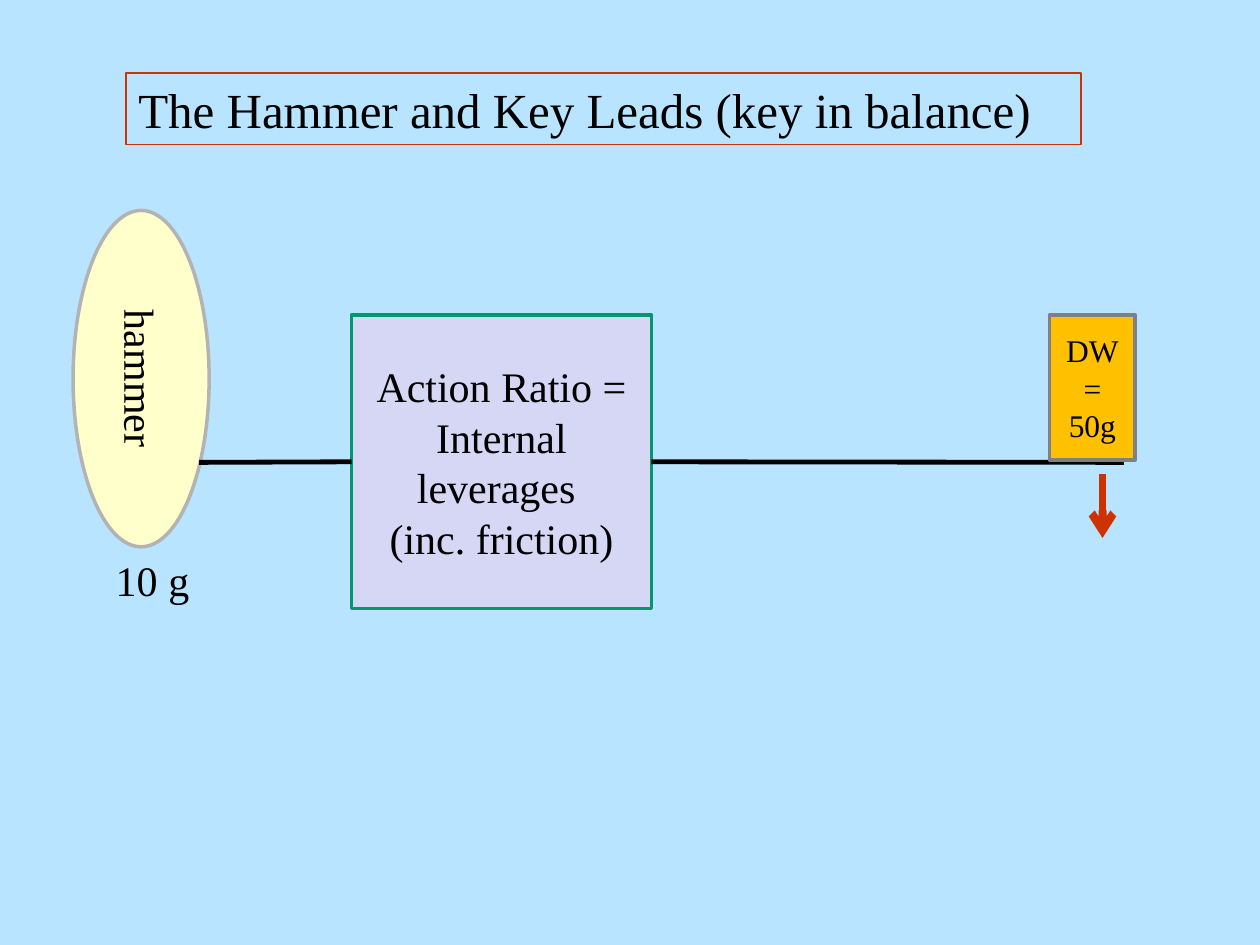
from pptx import Presentation, util as u
from pptx.dml.color import RGBColor
from pptx.enum import shapes, text
from pptx.oxml.ns import qn
from lxml import etree

FONT = "Times New Roman"
BLACK = "000000"


def color(value):
    """Turn a hex string into a colour."""
    return RGBColor.from_string(value)


def set_line(line, value, width):
    """Set the colour and width of a line."""
    line.color.rgb = color(value)
    line.width = u.Pt(width)


def write(sp, lines, size, align=text.PP_ALIGN.CENTER, anchor=text.MSO_ANCHOR.MIDDLE):
    """Write lines of one paragraph into a shape."""
    tf = sp.text_frame
    tf.word_wrap = True
    tf.vertical_anchor = anchor
    p = tf.paragraphs[0]
    p.alignment = align
    for i, line in enumerate(lines):
        if i:
            p.add_line_break()
        r = p.add_run()
        r.text = line
        r.font.name = FONT
        r.font.size = u.Pt(size)
        r.font.color.rgb = color(BLACK)
    return tf


def add_box(s, kind, at, line, width, fill=None):
    """Add an outlined shape, filled when a colour is given."""
    sp = s.shapes.add_shape(kind, *map(u.Inches, at))
    sp.shadow.inherit = False
    if fill:
        sp.fill.solid()
        sp.fill.fore_color.rgb = color(fill)
    else:
        sp.fill.background()
    set_line(sp.line, line, width)
    return sp


def add_label(sp, label, size):
    """Write a left-aligned label that its shape grows to fit."""
    tf = write(sp, [label], size, text.PP_ALIGN.LEFT, text.MSO_ANCHOR.TOP)
    tf.auto_size = text.MSO_AUTO_SIZE.SHAPE_TO_FIT_TEXT


def add_line(s, start, end, value, width, arrow=False):
    """Add a straight line, with an arrowhead at its end if asked."""
    cn = s.shapes.add_connector(shapes.MSO_CONNECTOR.STRAIGHT, *map(u.Inches, start + end))
    set_line(cn.line, value, width)
    if arrow:
        etree.SubElement(cn.line._get_or_add_ln(), qn("a:tailEnd"), type="arrow")
    etree.SubElement(cn.element.spPr, qn("a:effectLst"))
    return cn


def main():
    """Build the key balance slide."""
    prs = Presentation()
    prs.slide_width, prs.slide_height = u.Inches(10), u.Inches(7.5)
    s = prs.slides.add_slide(prs.slide_layouts[6])
    s.background.fill.solid()
    s.background.fill.fore_color.rgb = color("B9E4FF")
    rect = shapes.MSO_SHAPE.RECTANGLE

    hammer = add_box(s, shapes.MSO_SHAPE.OVAL, (0.58, 1.67, 1.08, 2.67), "B3B3B3", 2, "FFFFCC")
    tf = write(hammer, ["hammer"], 24)
    tf._txBody.bodyPr.set("vert", "vert")

    ratio = add_box(s, rect, (2.79, 2.5, 2.38, 2.33), "009771", 2, "D6D6F5")
    write(ratio, ["Action Ratio = Internal leverages ", "(inc. friction)"], 24)

    add_line(s, (1.58, 3.67), (2.79, 3.67), BLACK, 2.75).end_connect(ratio, 1)
    add_line(s, (5.17, 3.67), (8.92, 3.67), BLACK, 2.75).begin_connect(ratio, 3)

    title = add_box(s, rect, (1, 0.58, 7.58, 0.57), "CC3300", 0.75)
    add_label(title, "The Hammer and Key Leads (key in balance)", 28)
    mass = s.shapes.add_textbox(*map(u.Inches, (0.82, 4.35, 0.85, 0.5)))
    add_label(mass, "10 g", 24)

    weight = add_box(s, rect, (8.33, 2.5, 0.68, 1.15), "808080", 2, "FFC000")
    write(weight, ["DW= 50g"], 18)
    add_line(s, (8.75, 3.76), (8.75, 4.27), "CC3300", 4.5, arrow=True)

    prs.save("out.pptx")


if __name__ == "__main__":
    main()
